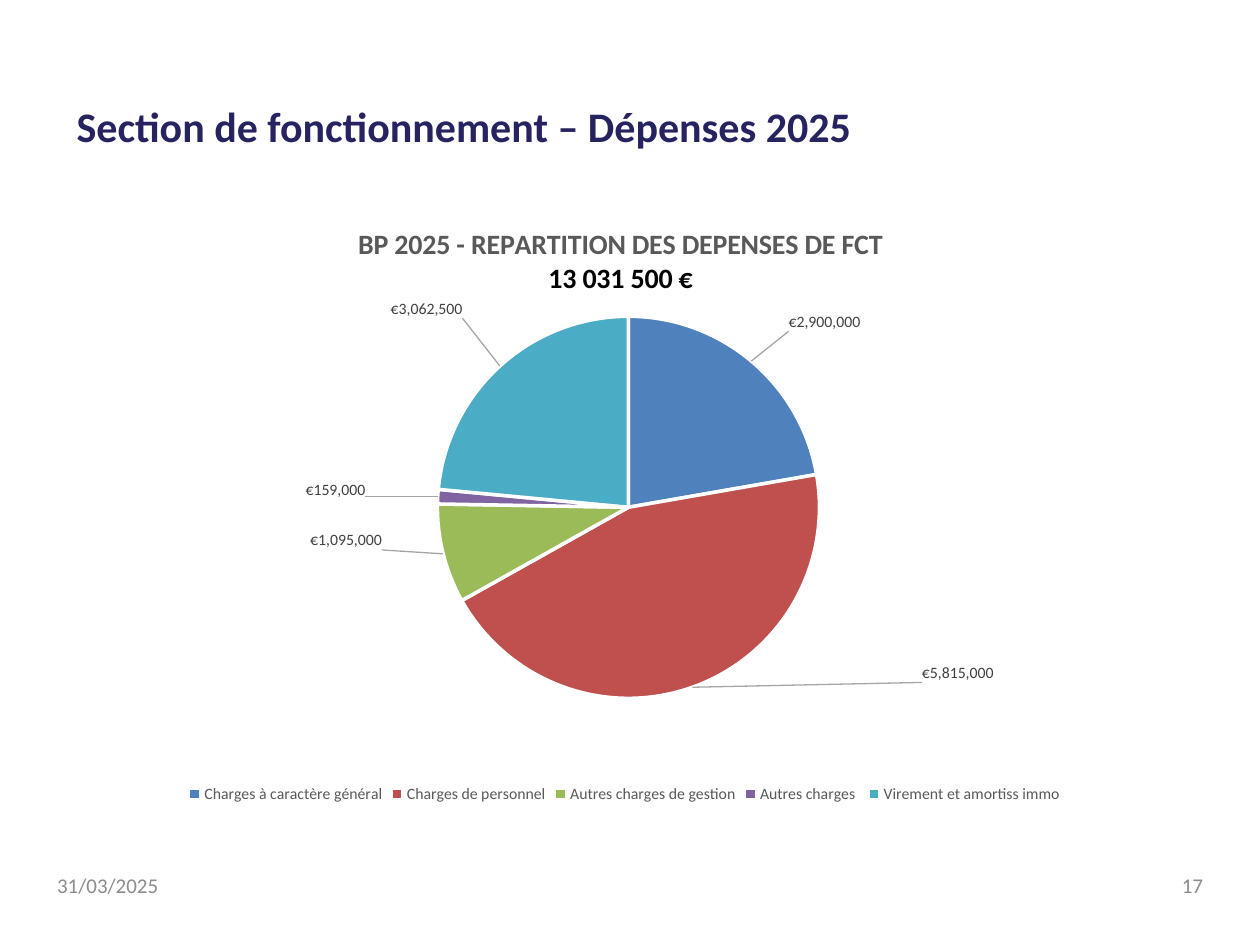
import dataclasses

import lxml.etree
import pptx
import pptx.chart.data
import pptx.dml.color
import pptx.enum.chart
import pptx.enum.text
import pptx.oxml
import pptx.oxml.ns
import pptx.util

Pt = pptx.util.Pt
Align = pptx.enum.text.PP_ALIGN
qn = pptx.oxml.ns.qn


@dataclasses.dataclass(frozen=True)
class Theme:
    font: str = "Calibri"
    navy: str = "272360"
    grey: str = "8C8C8C"
    dark: str = "595959"
    label: str = "404040"
    line: str = "A6A6A6"
    black: str = "000000"
    white: str = "FFFFFF"
    slices: tuple = ("4F81BD", "C0504D", "9BBB59", "8064A2", "4BACC6")
    head: int = 24
    title: int = 16
    foot: int = 12
    base: int = 10
    small: int = 9


theme = Theme()

COSTS = (
    ("Charges à caractère général", 2900000, (0.03, -0.04)),
    ("Charges de personnel", 5815000, (0.21, -0.05)),
    ("Autres charges de gestion", 1095000, (-0.05, -0.04)),
    ("Autres charges ", 159000, (-0.06, -0.01)),
    ("Virement et amortiss immo", 3062500, (-0.03, -0.07)),
)


def color(code):
    return pptx.dml.color.RGBColor.from_string(code)


def style(font, size, code, bold=False):
    font.name = theme.font
    font.size = Pt(size)
    font.bold = bold
    font.color.rgb = color(code)


def add_text(slide, text, *, box, size, code, bold=False, align=Align.LEFT):
    frame = slide.shapes.add_textbox(*map(Pt, box)).text_frame
    frame.word_wrap = True
    frame.vertical_anchor = pptx.enum.text.MSO_ANCHOR.MIDDLE
    para = frame.paragraphs[0]
    para.alignment = align
    run = para.add_run()
    run.text = text
    style(run.font, size, code, bold)


def layout(inner=False, **parts):
    root = lxml.etree.Element(qn("c:layout"))
    manual = lxml.etree.SubElement(root, qn("c:manualLayout"))
    if inner:
        lxml.etree.SubElement(manual, qn("c:layoutTarget"), val="inner")
        parts = {"xMode": "edge", "yMode": "edge", **parts}
    for name, val in parts.items():
        lxml.etree.SubElement(manual, qn("c:" + name), val=str(val))
    return root


def set_title(chart):
    chart.has_title = True
    title = chart.chart_title
    frame = title.text_frame
    lines = (
        ("BP 2025 - REPARTITION DES DEPENSES DE FCT", theme.dark),
        ("13 031 500 €", theme.black),
    )
    for num, (text, code) in enumerate(lines):
        para = frame.add_paragraph() if num else frame.paragraphs[0]
        run = para.add_run()
        run.text = text
        style(run.font, theme.title, code, True)
    root = title._element
    for old in root.findall(qn("c:layout")):
        root.remove(old)
    place = layout(xMode="edge", yMode="edge", x=0.25, y=0.03)
    root.find(qn("c:tx")).addnext(place)


def set_labels(series):
    labels = series.data_labels
    labels.show_value = True
    labels.number_format = '"€"#,##0'
    labels.number_format_is_linked = False
    style(labels.font, theme.small, theme.label)
    for num, (_, _, (x, y)) in enumerate(COSTS):
        label = series.points[num].data_label
        style(label.font, theme.small, theme.label)
        label.position = pptx.enum.chart.XL_LABEL_POSITION.OUTSIDE_END
        mark = labels._element.findall(qn("c:dLbl"))[num]
        mark.find(qn("c:idx")).addnext(layout(x=x, y=y))
    root = labels._element
    lead = root.find(qn("c:showLeaderLines"))
    if lead is None:
        lead = lxml.etree.SubElement(root, qn("c:showLeaderLines"))
    lead.set("val", "1")
    lead.addnext(pptx.oxml.parse_xml(
        f'<c:leaderLines {pptx.oxml.ns.nsdecls("c", "a")}><c:spPr>'
        f'<a:ln w="9525"><a:solidFill><a:srgbClr val="{theme.line}"/>'
        "</a:solidFill></a:ln></c:spPr></c:leaderLines>"
    ))


def add_pie(slide, box):
    data = pptx.chart.data.CategoryChartData(number_format='"€"#,##0')
    data.categories = [name for name, _, _ in COSTS]
    data.add_series("Series 1", [cost for _, cost, _ in COSTS])
    kind = pptx.enum.chart.XL_CHART_TYPE.PIE
    chart = slide.shapes.add_chart(kind, *map(Pt, box), data).chart
    style(chart.font, theme.base, theme.black)
    set_title(chart)
    plot = chart.plots[0]
    plot.vary_by_categories = True
    series = plot.series[0]
    for num, code in enumerate(theme.slices):
        form = series.points[num].format
        form.fill.solid()
        form.fill.fore_color.rgb = color(code)
        form.line.color.rgb = color(theme.white)
        form.line.width = Pt(2)
    set_labels(series)
    chart.has_legend = True
    chart.legend.position = pptx.enum.chart.XL_LEGEND_POSITION.BOTTOM
    chart.legend.include_in_layout = False
    style(chart.legend.font, theme.small, theme.dark)
    area = plot._element.getparent()
    for old in area.findall(qn("c:layout")):
        area.remove(old)
    area.insert(0, layout(True, x=0.084, y=0.186, w=0.839, h=0.632))


def main():
    deck = pptx.Presentation()
    deck.slide_width = Pt(720)
    deck.slide_height = Pt(540)
    slide = deck.slides.add_slide(deck.slide_layouts[6])
    add_text(slide, "Section de fonctionnement – Dépenses 2025",
             box=(36.7, 54.7, 590, 34), size=theme.head,
             code=theme.navy, bold=True)
    add_pie(slide, (48, 116.5, 618, 345.5))
    feet = ((25.5, "31/03/2025", Align.LEFT), (526.5, "17", Align.RIGHT))
    for left, text, align in feet:
        add_text(slide, text, box=(left, 491, 168, 29), size=theme.foot,
                 code=theme.grey, align=align)
    deck.save("out.pptx")


if __name__ == "__main__":
    main()
